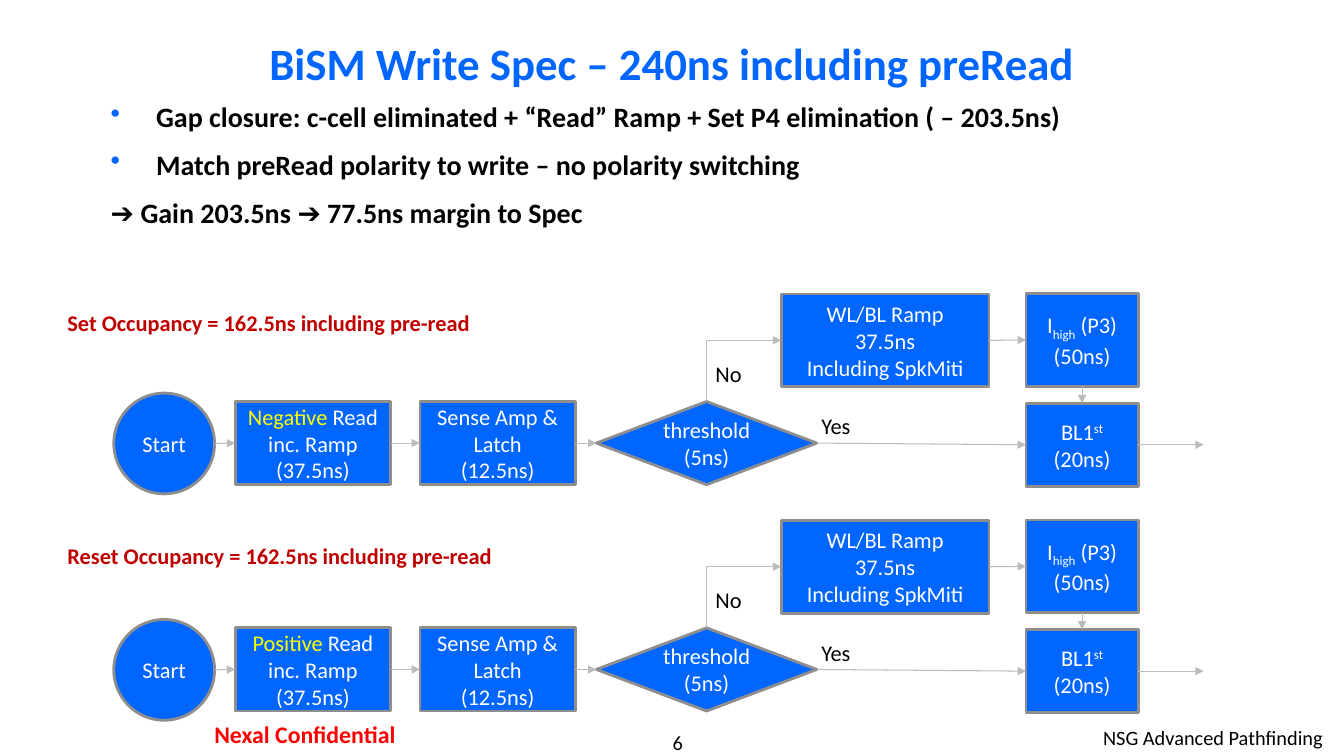
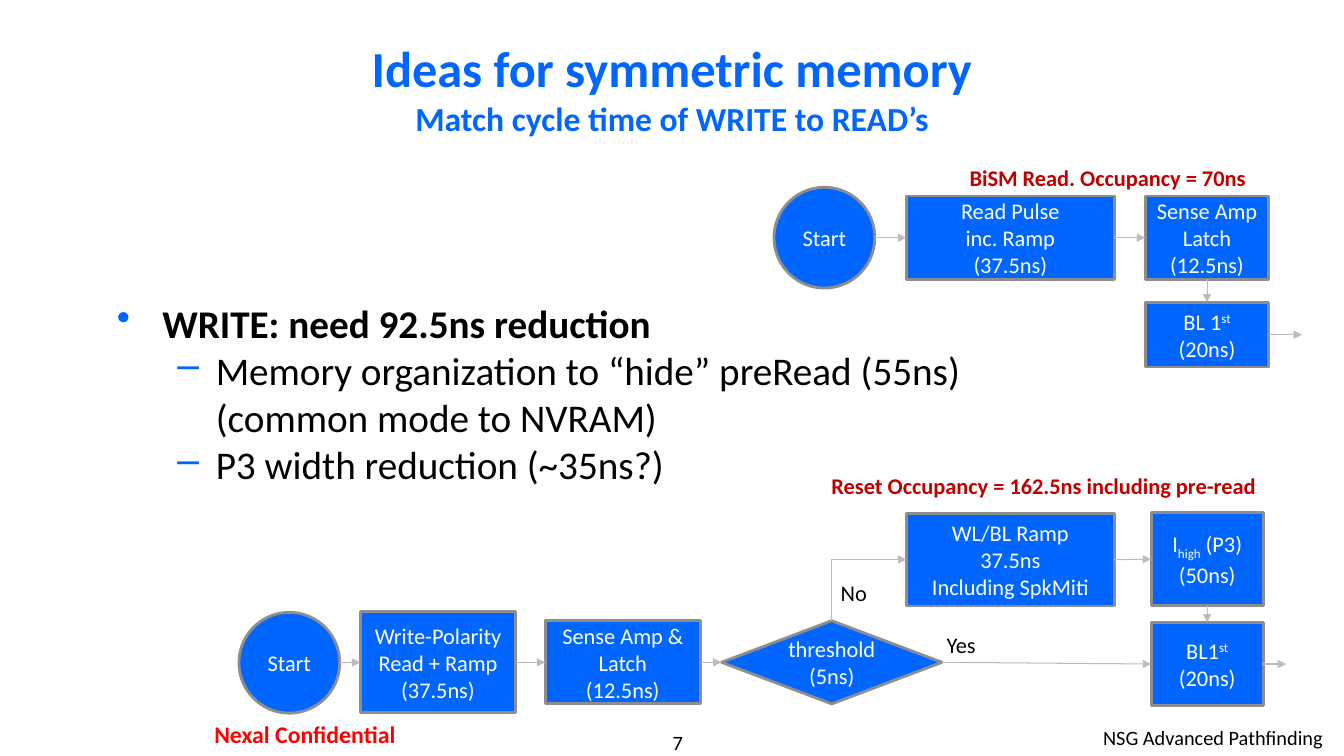
from lxml import etree
from pptx import Presentation
from pptx import util as u
from pptx.dml.color import RGBColor
from pptx.enum import shapes, text
from pptx.oxml.ns import qn

COLORS = {"blue": "0066FF", "border": "8E8E8E", "arrow": "BCBCBC", "label": "C00000",
          "alert": "FF0000", "accent": "FFFF00", "white": "FFFFFF", "black": "000000"}
COLS, ROWS = 160, 90
CELL = u.Inches(1 / 12)  # the slide is a grid of 160 by 90 square cells
KINDS, ALIGN, ANCHOR = shapes.MSO_SHAPE, text.PP_ALIGN, text.MSO_ANCHOR

# Text styles
NODE = {"size": 16, "color": "white", "align": ALIGN.CENTER, "anchor": ANCHOR.MIDDLE}
TITLE = {"size": 32, "color": "blue", "bold": True, "align": ALIGN.CENTER, "anchor": ANCHOR.MIDDLE}
BODY = {"size": 20, "bold": True}
BRANCH = {"size": 16, "wrap": False}
OCCUPANCY = BRANCH | {"color": "label", "bold": True}
FOOTER = {"size": 14.5}


def box(slide, kind, place, paragraphs, style):
    """Add a shape, or a text box when kind is None; a paragraph is a string or a list of runs."""
    area = [round(cells * CELL) for cells in place]
    if kind is None:
        item = slide.shapes.add_textbox(*area)
    else:
        item = slide.shapes.add_shape(kind, *area)
        item.shadow.inherit = False
        item.fill.solid()
        item.fill.fore_color.rgb = RGBColor.from_string(COLORS["blue"])
        item.line.color.rgb = RGBColor.from_string(COLORS["border"])
        item.line.width = u.Pt(2)
    frame = item.text_frame
    frame.word_wrap = style.get("wrap", True)
    if not frame.word_wrap:
        frame.auto_size = text.MSO_AUTO_SIZE.SHAPE_TO_FIT_TEXT
    frame.vertical_anchor = style.get("anchor", ANCHOR.TOP)
    for index, runs in enumerate(paragraphs):
        paragraph = frame.paragraphs[0] if index == 0 else frame.add_paragraph()
        paragraph.alignment = style.get("align", ALIGN.LEFT)
        for part in [runs] if isinstance(runs, str) else runs:
            words, change = (part, {}) if isinstance(part, str) else part
            look = style | change
            for number, line in enumerate(words.split("\n")):
                if number:
                    paragraph.add_line_break()
                run = paragraph.add_run()
                run.text = line
                font = {"name": "Calibri", "size": u.Pt(look["size"]), "bold": look.get("bold", False)}
                for key, value in font.items():
                    setattr(run.font, key, value)
                run.font.color.rgb = RGBColor.from_string(COLORS[look.get("color", "black")])
                if "baseline" in look:
                    run.font._element.set("baseline", str(look["baseline"] * 1000))
    return item


def link(slide, start, end, bent=False):
    """Draw an arrow; each end is a (shape, side) pair or an (x, y) grid point."""
    kind = shapes.MSO_CONNECTOR.ELBOW if bent else shapes.MSO_CONNECTOR.STRAIGHT
    glued = [hasattr(first, "shape_type") for first, _ in (start, end)]
    points = [(0, 0) if joined else [round(cells * CELL) for cells in point]
              for joined, point in zip(glued, (start, end))]
    arrow = slide.shapes.add_connector(kind, *points[0], *points[1])
    if glued[0]:
        arrow.begin_connect(*start)
    if glued[1]:
        arrow.end_connect(*end)
    arrow.line.color.rgb = RGBColor.from_string(COLORS["arrow"])
    arrow.line.width = u.Pt(0.75)
    etree.SubElement(arrow.line._get_or_add_ln(), qn("a:tailEnd"), type="triangle")
    properties = arrow.element.spPr
    etree.SubElement(properties, qn("a:effectLst"))
    if bent:  # one corner: up, then right
        across, rise = arrow.width, arrow.height
        shift = (across - rise) // 2
        area = {"left": arrow.left + shift, "top": arrow.top - shift, "width": rise, "height": across}
        for key, value in area.items():
            setattr(arrow, key, value)
        for key, value in {"rot": "5400000", "flipH": "1", "flipV": "1"}.items():
            properties.find(qn("a:xfrm")).set(key, value)
        properties.find(qn("a:prstGeom")).set("prst", "bentConnector2")


prs = Presentation()
prs.slide_width, prs.slide_height = COLS * CELL, ROWS * CELL

# Contents; a write flow is (column shift, row shift, read text, read height, exit column,
# occupancy, occupancy place), a body line is (text, bullet, indent, hanging, space before)
SET_READ = [("Negative", {"color": "accent"}), " Read inc. Ramp"]
RESET_READ = [("Positive ", {"color": "accent"}), "Read inc. Ramp"]
RESET = "Reset Occupancy = 162.5ns including pre-read"
PLAIN = {"bold": False}
pages = [
    {"title": ["BiSM Write Spec – 240ns including preRead"],
     "title_place": (12, 2, 136, 11), "title_size": 32,
     "body_place": (12, 11.3, 141, 24), "body_size": 20,
     "body": [("Gap closure: c-cell eliminated + “Read” Ramp + Set P4 elimination ( – 203.5ns)",
               "•", 0.45, 0.45, 0),
              ("Match preRead polarity to write – no polarity switching", "•", 0.45, 0.45, 10),
              ("➔ Gain 203.5ns ➔ 77.5ns margin to Spec", None, 0, 0, 10)],
     "flows": [(0, 0, SET_READ, 9.9, 143.3,
                "Set Occupancy = 162.5ns including pre-read", (6.85, 36.25, 51.1, 4.4)),
               (0, 26.95, RESET_READ, 9.9, 143.3, RESET, (6.85, 64, 53.9, 4.4))]},
    {"title": [[("Ideas for symmetric memory", {"size": 36})], "Match cycle time of WRITE to READ’s"],
     "title_place": (12, 2, 136, 16.8), "title_size": 24,
     "body_place": (12.75, 35, 121.5, 26), "body_size": 28,
     "body": [("WRITE: need 92.5ns reduction", "•", 0.45, 0.45, 0),
              ([("Memory organization to “hide” preRead (55ns)\n(common mode to NVRAM)", PLAIN)],
               "–", 0.98, 0.38, 0),
              ([("P3 width reduction (~35ns?)", PLAIN)], "–", 0.98, 0.38, 0)],
     "flows": [(14.9, 26.1, "Write-Polarity Read + Ramp", 12, 153.1, RESET, (97.8, 55.6, 53.9, 4.4))]},
]

for page_number, page in enumerate(pages, start=6):
    slide = prs.slides.add_slide(prs.slide_layouts[6])

    # Footer
    number = box(slide, None, (66.7, 86.9, 28, 2.9), [str(page_number)], FOOTER | {"align": ALIGN.CENTER})
    for side in ("left", "top", "right", "bottom"):
        setattr(number.text_frame, "margin_" + side, 0)
    box(slide, None, (106, 85.8, 52.65, 4.2), ["NSG Advanced Pathfinding"], FOOTER | {"align": ALIGN.RIGHT})
    box(slide, None, (18.6, 85.1, 35.4, 4.9), ["Nexal Confidential"],
        {"size": 17, "color": "alert", "bold": True, "align": ALIGN.CENTER})

    # Title and body
    box(slide, None, page["title_place"], page["title"], TITLE | {"size": page["title_size"]})
    body = box(slide, None, page["body_place"], [line[0] for line in page["body"]],
               BODY | {"size": page["body_size"]})
    for paragraph, (_, bullet, indent, hanging, space) in zip(body.text_frame.paragraphs, page["body"]):
        if space:
            paragraph.space_before = u.Pt(space)
        if bullet:
            layout = paragraph._p.get_or_add_pPr()
            layout.set("marL", str(u.Inches(indent)))
            layout.set("indent", str(-u.Inches(hanging)))
            tint = etree.SubElement(layout, qn("a:buClr"))
            etree.SubElement(tint, qn("a:srgbClr"), val=COLORS["blue"])
            etree.SubElement(layout, qn("a:buChar"), char=bullet)

    # Write flows
    for dx, dy, read_text, read_height, exit_col, occupancy, occupancy_place in page["flows"]:
        axis = 52.75 + dy
        top = axis - 9.9 / 2
        box(slide, None, occupancy_place, [occupancy], OCCUPANCY)
        box(slide, None, (96.6 + dx, 48.5 + dy, 5.9, 4.4), ["Yes"], BRANCH)
        box(slide, None, (84 + dx, 42.25 + dy, 5.65, 4.4), ["No"], BRANCH)
        box(slide, KINDS.OVAL, (13.55 + dx, 46.8 + dy, 12, 12), ["Start"], NODE)
        read = box(slide, KINDS.RECTANGLE, (28 + dx, axis - read_height / 2, 18.5, read_height),
                   [read_text, "(37.5ns)"], NODE)
        sense = box(slide, KINDS.RECTANGLE, (50 + dx, top, 18.5, 9.9),
                    ["Sense Amp &", "Latch", "(12.5ns)"], NODE)
        threshold = box(slide, KINDS.DIAMOND, (71 + dx, top, 26.25, 9.9), ["threshold (5ns)"], NODE)
        ramp = box(slide, KINDS.RECTANGLE, (93 + dx, 35 + dy, 24.75, 11.05),
                   ["WL/BL Ramp", "37.5ns", "Including SpkMiti"], NODE)
        high = box(slide, KINDS.RECTANGLE, (122.15 + dx, 34.95 + dy, 13.35, 11.05),
                   [["I", ("high", {"baseline": -25}), " (P3)"], "(50ns)"], NODE)
        bitline = box(slide, KINDS.RECTANGLE, (122.15 + dx, 48 + dy, 13.35, 9.9),
                      [["BL1", ("st", {"baseline": 30})], "(20ns)"], NODE)
        link(slide, (25.55 + dx, 52.8 + dy), (read, 1))
        for before, after in ((read, sense), (sense, threshold), (threshold, bitline), (ramp, high)):
            link(slide, (before, 3), (after, 1))
        link(slide, (threshold, 0), (ramp, 1), bent=True)
        link(slide, (high, 2), (bitline, 0))
        link(slide, (bitline, 3), (exit_col, 52.95 + dy))

# Read flow on the last slide
box(slide, None, (114.25, 19, 35.75, 4.4), ["BiSM Read. Occupancy = 70ns"], OCCUPANCY)
box(slide, KINDS.OVAL, (92.15, 22.3, 12, 12), ["Start"], NODE)
pulse = box(slide, KINDS.RECTANGLE, (107.9, 23.35, 24.75, 9.9),
            ["Read Pulse", "inc. Ramp", "(37.5ns)"], NODE)
latch = box(slide, KINDS.RECTANGLE, (136.35, 23.35, 14.7, 9.9), ["Sense Amp Latch", "(12.5ns)"], NODE)
first_bitline = box(slide, KINDS.RECTANGLE, (136.35, 36, 14.7, 7.7),
                    [["BL 1", ("st", {"baseline": 30})], "(20ns)"], NODE)
link(slide, (104.15, 28.3), (pulse, 1))
link(slide, (pulse, 3), (latch, 1))
link(slide, (latch, 2), (first_bitline, 0))
link(slide, (first_bitline, 3), (155, 39.85))

prs.save("out.pptx")
